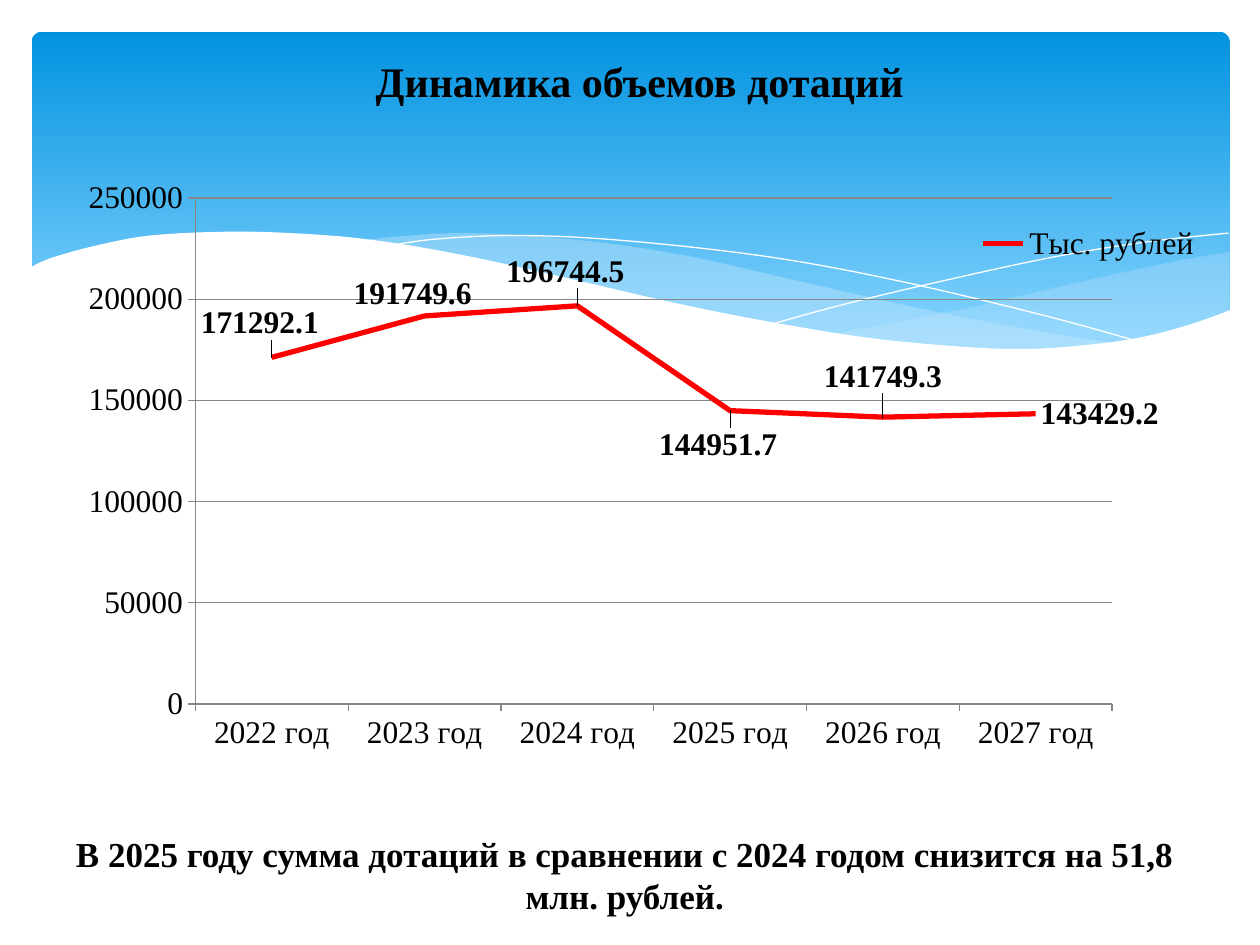
from typing import NamedTuple, Optional

from lxml import etree
from pptx import Presentation, util as u
from pptx.chart.data import CategoryChartData
from pptx.dml.color import RGBColor
from pptx.enum import chart as ch, shapes, text
from pptx.oxml import parse_xml
from pptx.oxml.ns import nsdecls, qn

FONT = "Times New Roman"
BLACK, WHITE, RED, GREY = "000000", "FFFFFF", "FF0000", "868686"
PALE = "C6E7FC"


class Wave(NamedTuple):
    edges: list  # curves through points in inches, joined end to end
    fill: Optional[str] = None
    opacity: int = 100


class Label(NamedTuple):
    year: str
    value: float
    position: ch.XL_LABEL_POSITION
    shift: Optional[tuple] = None  # fraction of the chart size


def color(value: str) -> RGBColor:
    return RGBColor.from_string(value)


def format_font(font, size: float, bold: bool = False, fill: str = BLACK) -> None:
    font.name, font.size, font.bold = FONT, u.Pt(size), bold
    font.color.rgb = color(fill)


def write(shape, content: str, *, size: float, bold: bool = True,
          anchor=text.MSO_ANCHOR.TOP) -> None:
    frame = shape.text_frame
    frame.word_wrap, frame.vertical_anchor = True, anchor
    frame.auto_size = text.MSO_AUTO_SIZE.NONE
    paragraph = frame.paragraphs[0]
    paragraph.alignment = text.PP_ALIGN.CENTER
    run = paragraph.add_run()
    run.text = content
    format_font(run.font, size, bold)


def smooth(points: list, steps: int = 6) -> list:
    """Catmull-Rom curve through the points."""
    padded = [points[0], *points, points[-1]]
    curve = [points[0]]
    for a, b, c, d in zip(padded, padded[1:], padded[2:], padded[3:]):
        for step in range(1, steps + 1):
            t = step / steps
            curve.append(tuple(
                q + t * (r - p) / 2 + t**2 * (2 * p - 5 * q + 4 * r - s) / 2
                + t**3 * (3 * q - p - 3 * r + s) / 2
                for p, q, r, s in zip(a, b, c, d)))
    return curve


def draw_wave(slide, wave: Wave) -> None:
    points = [(u.Cm(x * 2.54), u.Cm(y * 2.54))
              for edge in wave.edges for x, y in smooth(edge)]
    builder = slide.shapes.build_freeform(*points[0])
    builder.add_line_segments(points[1:], close=wave.fill is not None)
    shape = builder.convert_to_shape()
    shape.shadow.inherit = False
    if wave.fill is None:
        shape.fill.background()
        shape.line.color.rgb = color(WHITE)
        shape.line.width = u.Pt(0)
        return
    shape.line.fill.background()
    shape.fill.solid()
    shape.fill.fore_color.rgb = color(wave.fill)
    if wave.opacity < 100:
        tint = shape.fill._xPr.find(".//" + qn("a:srgbClr"))
        etree.SubElement(tint, qn("a:alpha")).set("val", str(wave.opacity * 1000))


def manual_layout(**values):
    items = "".join(f'<c:{key} val="{value}"/>' for key, value in values.items())
    return parse_xml(f'<c:layout {nsdecls("c")}><c:manualLayout>{items}'
                     '</c:manualLayout></c:layout>')


def set_layout(parent, after: Optional[str], **values) -> None:
    for old in parent.findall(qn("c:layout")):
        parent.remove(old)
    place = 0 if after is None else parent.index(parent.find(qn(after))) + 1
    parent.insert(place, manual_layout(**values))


WAVES = [
    Wave([[(9.76, 2), (9.35, 2.07), (8.61, 2.23), (7.79, 2.42), (7.06, 2.57), (6.61, 2.65)],
          [(6.61, 2.65), (7.19, 2.72), (7.69, 2.77), (8.14, 2.78), (8.63, 2.75),
           (9.05, 2.69), (9.42, 2.59), (9.76, 2.47)]], PALE, 29),
    Wave([[(8.93, 2.73), (8.37, 2.65), (7.41, 2.47), (6.29, 2.22), (5.55, 2.05),
           (4.89, 1.94), (4.2, 1.87), (3.61, 1.85), (3.13, 1.88), (2.86, 1.91)],
          [(2.86, 1.91), (3.42, 1.99), (4.04, 2.11), (4.91, 2.32), (5.84, 2.52),
           (6.65, 2.66), (7.36, 2.75), (8.07, 2.78), (8.57, 2.77), (8.93, 2.73)]], PALE, 40),
    Wave([[(3.09, 1.95), (3.44, 1.9), (4.01, 1.87), (4.69, 1.89), (5.56, 1.97),
           (6.36, 2.08), (7.27, 2.26), (8.31, 2.51), (9.07, 2.72)]]),
    Wave([[(6.13, 2.57), (6.72, 2.41), (7.48, 2.23), (8.36, 2.04), (9.1, 1.92), (9.75, 1.85)]]),
    Wave([[(9.77, 2.46), (9.4, 2.59), (8.99, 2.69), (8.5, 2.75), (8.09, 2.77), (7.61, 2.75),
           (6.88, 2.68), (6.03, 2.54), (5.29, 2.39), (4.47, 2.2), (3.65, 2.02), (2.92, 1.9),
           (2.3, 1.85), (1.77, 1.84), (1.19, 1.87), (0.76, 1.95), (0.4, 2.05), (0.23, 2.13)],
          [(0.23, 3.29), (9.77, 3.29)]], WHITE),
]

POS = ch.XL_LABEL_POSITION
LABELS = [
    Label("2022 год", 171292.1, POS.ABOVE, (-0.01, -0.02)),
    Label("2023 год", 191749.6, POS.ABOVE, (-0.01, 0)),
    Label("2024 год", 196744.5, POS.ABOVE, (-0.01, -0.02)),
    Label("2025 год", 144951.7, POS.BELOW, (-0.01, 0.02)),
    Label("2026 год", 141749.3, POS.ABOVE, (0, -0.03)),
    Label("2027 год", 143429.2, POS.RIGHT),
]


def draw_band(slide) -> None:
    band = slide.shapes.add_shape(shapes.MSO_SHAPE.ROUNDED_RECTANGLE,
                                  u.Cm(0.64), u.Cm(0.64), u.Cm(24.15), u.Cm(6.86))
    band.adjustments[0] = 0.03
    band.shadow.inherit = False
    band.line.fill.background()
    band.fill.gradient()
    band.fill.gradient_angle = 270
    for stop, (position, tint) in zip(band.fill.gradient_stops,
                                      [(0, "0293E0"), (0.9, "83D3FE")]):
        stop.position, stop.color.rgb = position, color(tint)


def draw_chart(slide) -> None:
    data = CategoryChartData()
    data.categories = [label.year for label in LABELS]
    data.add_series("Тыс. рублей", [label.value for label in LABELS])
    chart = slide.shapes.add_chart(ch.XL_CHART_TYPE.LINE, u.Cm(0.58), u.Cm(3.38),
                                   u.Cm(24), u.Cm(12.29), data).chart
    format_font(chart.font, 18)
    chart.has_title = False
    plot = chart.plots[0]
    plot.vary_by_categories = False
    set_layout(chart._chartSpace.chart.plotArea, None, layoutTarget="inner", xMode="edge",
               yMode="edge", x=0.14, y=0.05, w=0.77, h=0.83)

    # Axes
    for axis in (chart.category_axis, chart.value_axis):
        axis.major_tick_mark = ch.XL_TICK_MARK.OUTSIDE
        axis.minor_tick_mark = ch.XL_TICK_MARK.NONE
        axis.format.line.color.rgb = color(GREY)
    values = chart.value_axis
    values.minimum_scale, values.maximum_scale, values.major_unit = 0, 250000, 50000
    values.has_major_gridlines = True
    values.major_gridlines.format.line.color.rgb = color(GREY)

    # Legend
    chart.has_legend = True
    chart.legend.position = ch.XL_LEGEND_POSITION.RIGHT
    chart.legend.include_in_layout = False
    set_layout(chart.legend._element, "c:legendPos", xMode="edge", yMode="edge",
               x=0.79, y=0.09, w=0.2, h=0.07)

    # Line and its labels
    series = plot.series[0]
    series.smooth = False
    series.marker.style = ch.XL_MARKER_STYLE.NONE
    series.format.line.color.rgb = color(RED)
    series.format.line.width = u.Pt(3)
    series.data_labels.show_value = True
    format_font(series.data_labels.font, 18, bold=True)
    for index, label in enumerate(LABELS):
        point_label = series.points[index].data_label
        format_font(point_label.font, 18, bold=True)
        point_label.position = label.position
        if label.shift:
            x, y = label.shift
            set_layout(point_label._dLbl, "c:idx", x=x, y=y)


def main() -> None:
    prs = Presentation()
    prs.slide_width, prs.slide_height = u.Cm(25.4), u.Cm(19.05)
    slide = prs.slides.add_slide(prs.slide_layouts[5])

    # Background band with waves
    draw_band(slide)
    for wave in WAVES:
        draw_wave(slide, wave)

    # Title, brought in front of the band
    title = slide.shapes.title
    title.left, title.top, title.width, title.height = map(u.Cm, (1.78, 1, 22.23, 1.27))
    write(title, "Динамика объемов дотаций", size=24, anchor=text.MSO_ANCHOR.MIDDLE)
    slide.shapes._spTree.append(title._element)

    draw_chart(slide)

    # Conclusion
    conclusion = slide.shapes.add_textbox(u.Cm(1.19), u.Cm(16.66), u.Cm(22.81), u.Cm(1.96))
    write(conclusion, "В 2025 году сумма дотаций в сравнении с 2024 годом "
          "снизится на 51,8 млн. рублей.", size=20)

    prs.save("out.pptx")


if __name__ == "__main__":
    main()
